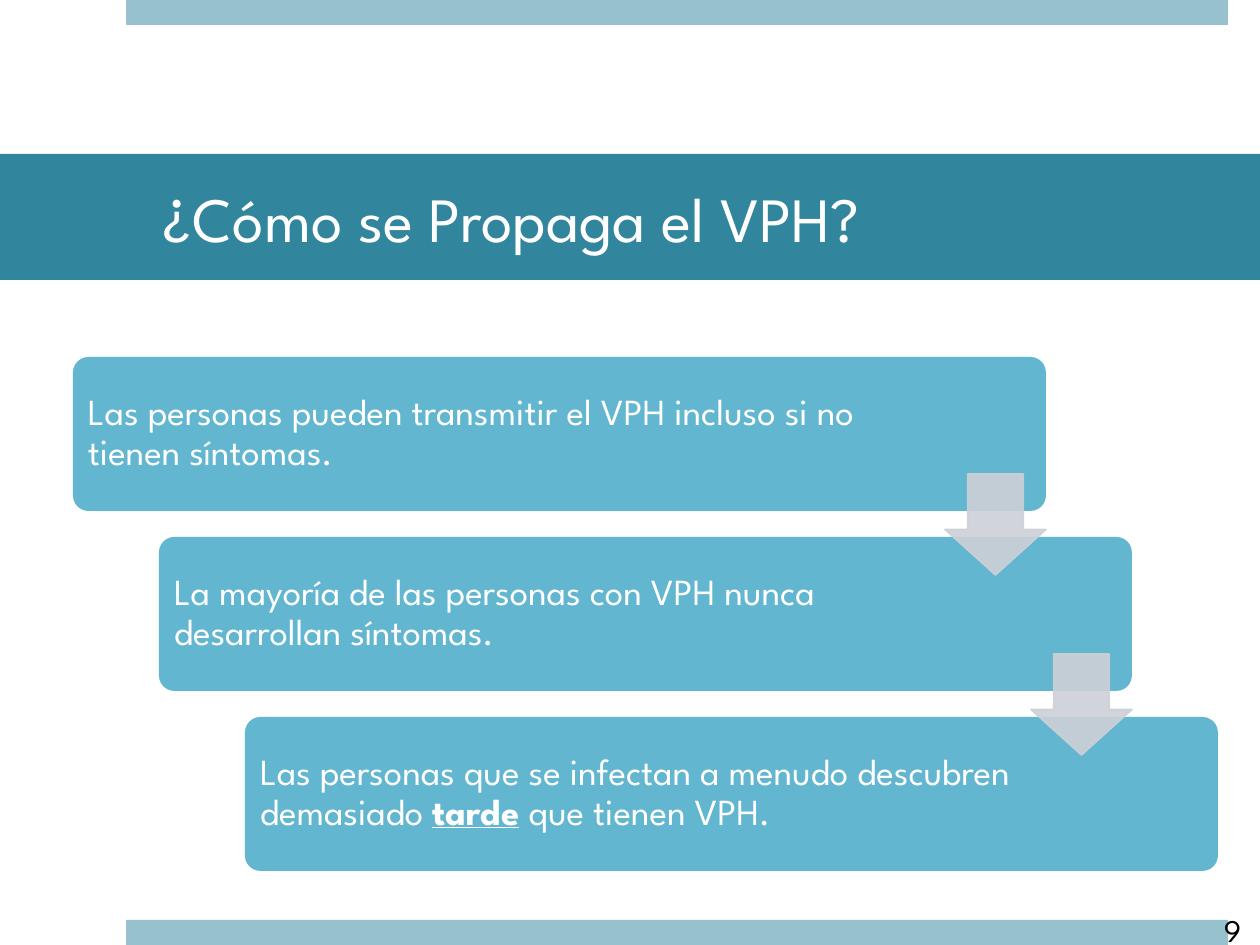
import pptx
import pptx.util
import pptx.dml.color
import pptx.enum.shapes
import pptx.enum.text
import pptx.oxml.ns
from lxml import etree

SCALE = 914400 / 126
FONT = "League Spartan"
TEAL, CARD, GREY, WHITE, BLACK = "31859C", "62B6CF", "CDD0D7", "FFFFFF", "000000"
SHAPES = pptx.enum.shapes.MSO_SHAPE
MIDDLE = pptx.enum.text.MSO_ANCHOR.MIDDLE

TITLE = "¿Cómo se Propaga el VPH?"
PAGE = "9"
# Each step: text width, then runs of (text, stressed)
STEPS = [
    (806, [("Las personas pueden transmitir el VPH incluso si no tienen síntomas.", False)]),
    (777, [("La mayoría de las personas con VPH nunca desarrollan síntomas.", False)]),
    (777, [("Las personas que se infectan a menudo descubren demasiado ", False),
           ("tarde", True), (" que tienen VPH.", False)]),
]
BARS = [0, 920]
LEFT, TOP, WIDTH, HEIGHT = 73, 357, 973, 154
SHIFT, DROP = 86, 180
ARROW = 101


def px(num):
    return pptx.util.Emu(round(num * SCALE))


def paint(fill, color, alpha=100):
    fill.solid()
    fill.fore_color.rgb = pptx.dml.color.RGBColor.from_string(color)
    if alpha < 100:
        tag = pptx.oxml.ns.qn("a:alpha")
        # The colour element sits inside the solid fill
        node = fill.fore_color._xFill.find(pptx.oxml.ns.qn("a:srgbClr"))
        etree.SubElement(node, tag).set("val", str(alpha * 1000))


def add_box(slide, kind, box, color, alpha=100, adjust=()):
    shape = slide.shapes.add_shape(kind, *map(px, box))
    shape.shadow.inherit = False
    shape.line.fill.background()
    paint(shape.fill, color, alpha)
    for i, value in enumerate(adjust):
        shape.adjustments[i] = value
    return shape


def write(shape, runs, size, color, insets, anchor=None, spacing=None):
    frame = shape.text_frame
    frame.word_wrap = True
    frame.margin_left, frame.margin_top, frame.margin_right, frame.margin_bottom = map(px, insets)
    if anchor is not None:
        frame.vertical_anchor = anchor
    para = frame.paragraphs[0]
    para.alignment = pptx.enum.text.PP_ALIGN.LEFT
    para.line_spacing = spacing
    for text, stress in runs:
        run = para.add_run()
        run.text = text
        font = run.font
        font.name, font.size = FONT, pptx.util.Pt(size)
        font.bold = font.underline = stress
        font.color.rgb = pptx.dml.color.RGBColor.from_string(color)


def add_text(slide, box, *style):
    write(slide.shapes.add_textbox(*map(px, box)), *style)


def main():
    deck = pptx.Presentation()
    deck.slide_width, deck.slide_height = px(1260), px(945)
    slide = deck.slides.add_slide(deck.slide_layouts[6])

    for top in BARS:
        add_box(slide, SHAPES.RECTANGLE, (126, top, 1102, 25), TEAL, 50)
    band = add_box(slide, SHAPES.RECTANGLE, (0, 154, 1260, 126), TEAL)
    write(band, [(TITLE, False)], 36, WHITE, (164, 6, 38, 6), MIDDLE)

    for i, (width, runs) in enumerate(STEPS):
        left, top = LEFT + i * SHIFT, TOP + i * DROP
        add_box(slide, SHAPES.ROUNDED_RECTANGLE, (left, top, WIDTH, HEIGHT), CARD, adjust=[0.1])
        add_text(slide, (left + 4, top + 4, width, HEIGHT - 9),
                 runs, 21, WHITE, (11, 11, 11, 11), MIDDLE, 0.9)

    for i in range(len(STEPS) - 1):
        left = LEFT + WIDTH - ARROW + i * SHIFT
        top = TOP + 117 + i * DROP
        arrow = add_box(slide, SHAPES.DOWN_ARROW, (left, top, ARROW, ARROW),
                        GREY, 90, [0.55, 0.45])
        paint(arrow.line.fill, GREY, 90)
        arrow.line.width = pptx.util.Pt(1)

    add_text(slide, (1211, 905, 63, 50), [(PAGE, False)], 18, BLACK, (13, 6, 13, 6))
    deck.save("out.pptx")


if __name__ == "__main__":
    main()
